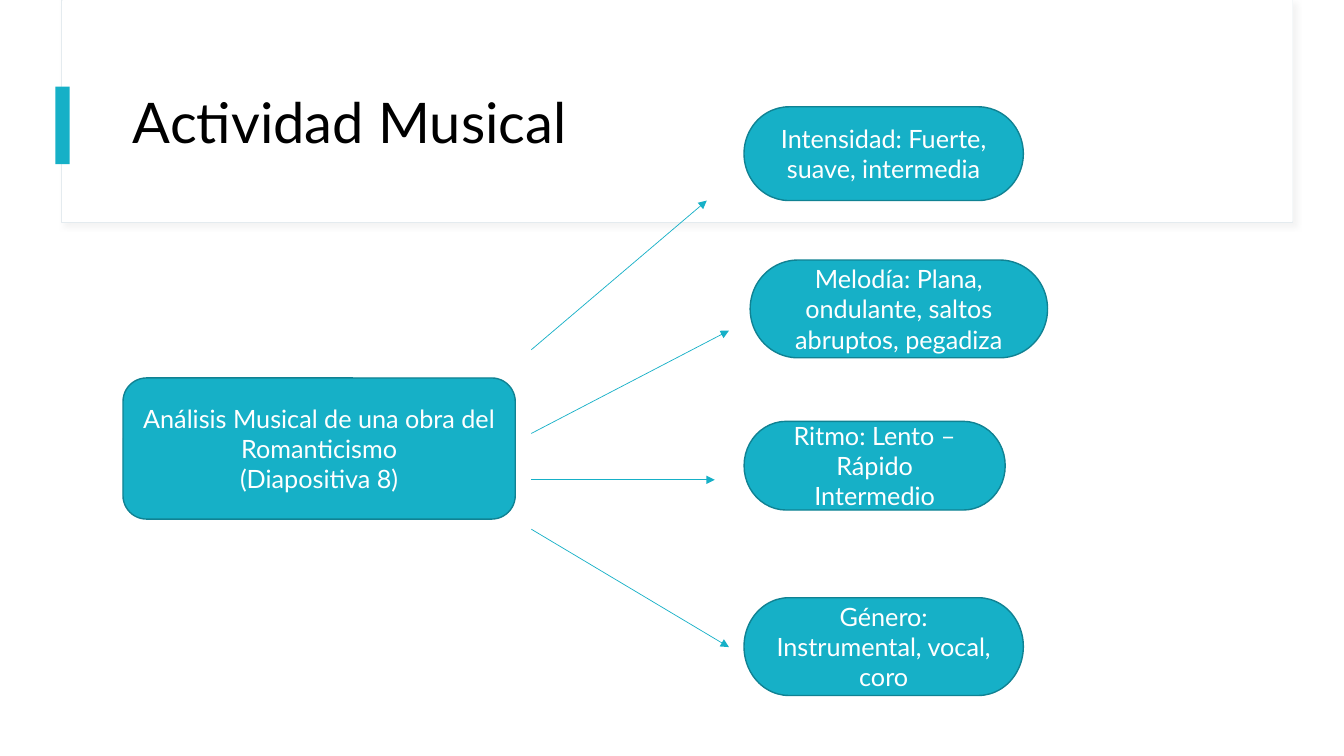
import pptx
import pptx.util
import pptx.dml.color
import pptx.enum.shapes
import pptx.enum.text
import pptx.oxml
import pptx.oxml.ns
from pptx.util import Inches

RGBColor = pptx.dml.color.RGBColor
Shape = pptx.enum.shapes.MSO_SHAPE
Align = pptx.enum.text.PP_ALIGN
Anchor = pptx.enum.text.MSO_ANCHOR

WHITE = RGBColor(0xFF, 0xFF, 0xFF)
BLACK = RGBColor(0, 0, 0)
TEAL = RGBColor(0x16, 0xB0, 0xC7)
DARK_TEAL = RGBColor(0x10, 0x82, 0x93)
PALE_GREY = RGBColor(0xE4, 0xEB, 0xEF)

NAMESPACE = pptx.oxml.ns.nsdecls("a")
SHADOW = (
    f'<a:effectLst {NAMESPACE}><a:outerShdw blurRad="50800" dist="38100" dir="2700000" '
    'algn="tl" rotWithShape="0"><a:srgbClr val="D9D9D9"><a:alpha val="30000"/>'
    "</a:srgbClr></a:outerShdw></a:effectLst>"
)


class ConceptMap:
    font = "Lato"

    def __init__(self, deck):
        self.page = deck.slides.add_slide(deck.slide_layouts[6])

    def set_text(self, frame, lines, size, color, align):
        frame.word_wrap = True
        frame.vertical_anchor = Anchor.MIDDLE
        for index, line in enumerate(lines):
            para = frame.paragraphs[0] if index == 0 else frame.add_paragraph()
            para.text = line
            para.alignment = align
            para.font.name = self.font
            para.font.size = pptx.util.Pt(size)
            para.font.color.rgb = color

    def panel(self, place, fill, line=None, width=1, kind=Shape.RECTANGLE):
        box = self.page.shapes.add_shape(kind, *map(Inches, place))
        box.shadow.inherit = False
        box.fill.solid()
        box.fill.fore_color.rgb = fill
        if line is None:
            box.line.fill.background()
        else:
            box.line.color.rgb = line
            box.line.width = pptx.util.Pt(width)
        return box

    def shadowed_panel(self, place):
        box = self.panel(place, WHITE, PALE_GREY, 0.75)
        properties = box._element.spPr
        properties.remove(properties.find(pptx.oxml.ns.qn("a:effectLst")))
        properties.append(pptx.oxml.parse_xml(SHADOW))

    def title(self, place, text):
        box = self.page.shapes.add_textbox(*map(Inches, place))
        self.set_text(box.text_frame, [text], 40, BLACK, Align.LEFT)
        box.text_frame.paragraphs[0].line_spacing = 0.9

    def node(self, place, lines, kind=Shape.FLOWCHART_TERMINATOR):
        box = self.panel(place, TEAL, DARK_TEAL, kind=kind)
        self.set_text(box.text_frame, lines, 18, WHITE, Align.CENTER)

    def arrow(self, start, end):
        connector = self.page.shapes.add_connector(
            pptx.enum.shapes.MSO_CONNECTOR.STRAIGHT, *map(Inches, start + end)
        )
        connector.line.color.rgb = TEAL
        connector.line.width = pptx.util.Pt(0.5)
        connector.line._get_or_add_ln().append(
            pptx.oxml.parse_xml(f'<a:tailEnd {NAMESPACE} type="triangle"/>')
        )
        connector._element.spPr.append(pptx.oxml.parse_xml(f"<a:effectLst {NAMESPACE}/>"))


def main():
    deck = pptx.Presentation()
    deck.slide_width = Inches(13.33)
    deck.slide_height = Inches(7.5)

    concept_map = ConceptMap(deck)
    concept_map.shadowed_panel((0.61, 0, 12.21, 2.21))
    concept_map.panel((0.62, 0, 12.2, 2.2), WHITE)
    concept_map.panel((0.55, 0.86, 0.14, 0.77), TEAL)
    concept_map.title((1.22, 0.6, 11.12, 1.29), "Actividad Musical")

    concept_map.node(
        (1.22, 3.75, 3.89, 1.4),
        ["Análisis Musical de una obra del Romanticismo", "(Diapositiva 8)"],
        Shape.ROUNDED_RECTANGLE,
    )
    aspects = [
        ((7.38, 4.18, 2.59, 0.88), ["Ritmo: Lento – Rápido", "Intermedio"]),
        ((7.38, 5.93, 2.77, 0.97), ["Género: Instrumental, vocal, coro"]),
        ((7.44, 2.58, 2.95, 0.97), ["Melodía: Plana, ondulante, saltos abruptos, pegadiza"]),
        ((7.38, 1.06, 2.77, 0.93), ["Intensidad: Fuerte, suave, intermedia"]),
    ]
    for place, lines in aspects:
        concept_map.node(place, lines)

    arrow_left = 5.27
    arrows = [(3.47, (7.01, 1.99)), (4.3, (7.23, 3.28)), (4.76, (7.09, 4.76)), (5.25, (7.23, 6.42))]
    for start_top, end in arrows:
        concept_map.arrow((arrow_left, start_top), end)

    deck.save("out.pptx")


if __name__ == "__main__":
    main()
